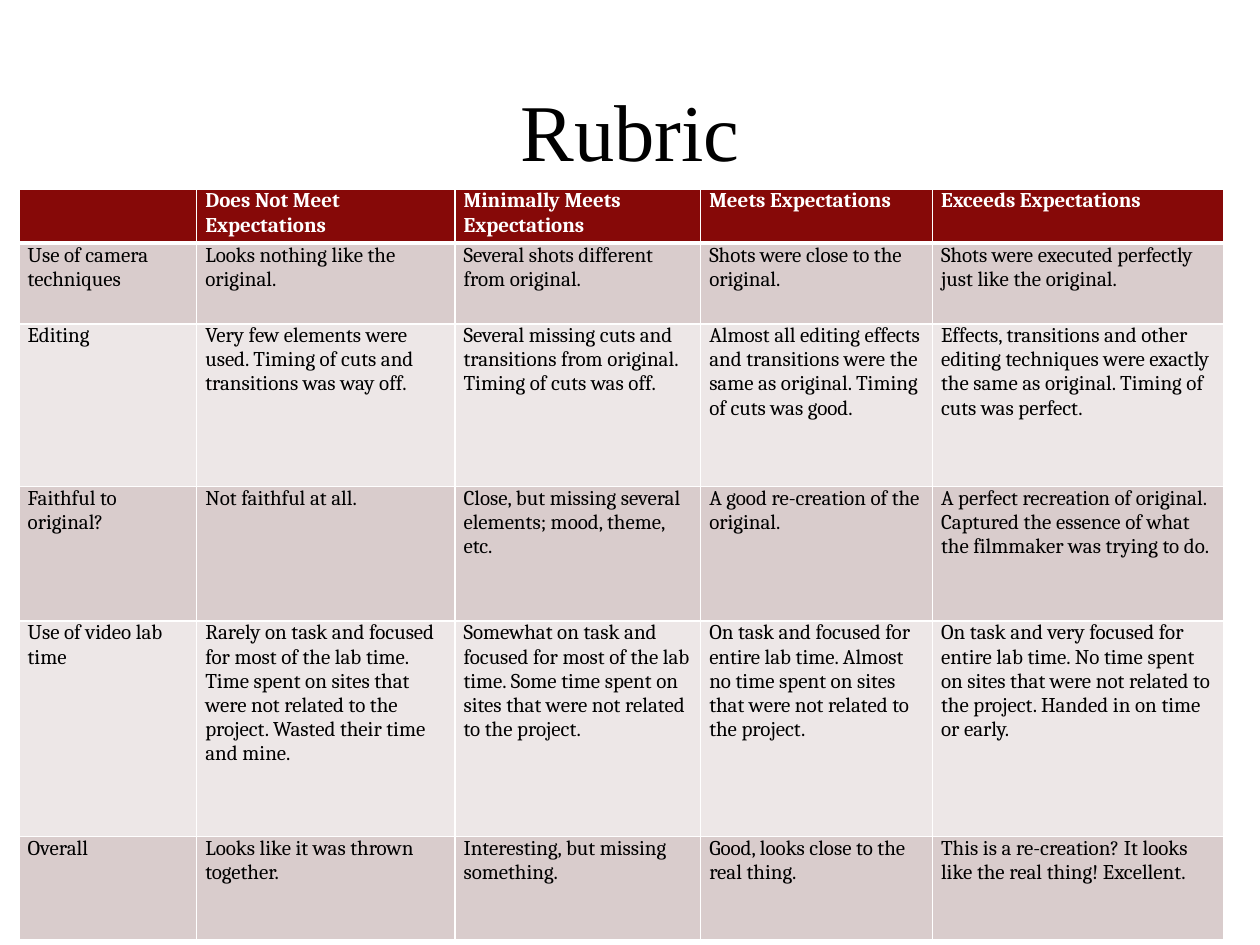
from lxml import etree
from pptx import Presentation
from pptx.dml.color import RGBColor
from pptx.enum.text import MSO_ANCHOR, PP_ALIGN
from pptx.oxml.ns import qn
from pptx.util import Inches, Pt

CENTER, LEFT = PP_ALIGN.CENTER, PP_ALIGN.LEFT
MIDDLE, TOP = MSO_ANCHOR.MIDDLE, MSO_ANCHOR.TOP
TITLE_ONLY = 5

WHITE, BLACK = "FFFFFF", "000000"
HEADER_FILL = "860908"
BAND_FILLS = ("EDE7E7", "D9CCCC")

COLUMN_WIDTHS = (1.41, 2.05, 1.95, 1.84, 2.31)
ROW_HEIGHTS = (0.43, 0.64, 1.29, 1.07, 1.71, 0.82)

RUBRIC = (
    ("", "Does Not Meet Expectations", "Minimally Meets Expectations",
     "Meets Expectations", "Exceeds Expectations"),
    ("Use of camera techniques",
     "Looks nothing like the original.",
     "Several shots different from original.",
     "Shots were close to the original.",
     "Shots were executed perfectly just like the original."),
    ("Editing",
     "Very few elements were used. Timing of cuts and transitions was way off.",
     "Several missing cuts and transitions from original. Timing of cuts was off.",
     "Almost all editing effects and transitions were the same as original. "
     "Timing of cuts was good.",
     "Effects, transitions and other editing techniques were exactly the same "
     "as original. Timing of cuts was perfect."),
    ("Faithful to original?",
     "Not faithful at all.",
     "Close, but missing several elements; mood, theme, etc.",
     "A good re-creation of the original.",
     "A perfect recreation of original. Captured the essence of what the "
     "filmmaker was trying to do."),
    ("Use of video lab time",
     "Rarely on task and focused for most of the lab time. Time spent on sites "
     "that were not related to the project. Wasted their time and mine.",
     "Somewhat on task and focused for most of the lab time. Some time spent on "
     "sites that were not related to the project.",
     "On task and focused for entire lab time. Almost no time spent on sites "
     "that were not related to the project.",
     "On task and very focused for entire lab time. No time spent on sites that "
     "were not related to the project. Handed in on time or early."),
    ("Overall",
     "Looks like it was thrown together.",
     "Interesting, but missing something.",
     "Good, looks close to the real thing.",
     "This is a re-creation? It looks like the real thing! Excellent."),
)


def rgb(value):
    return RGBColor.from_string(value)


def write_text(frame, text, *, size, font, color=BLACK, bold=False, align=LEFT):
    frame.word_wrap = True
    paragraph = frame.paragraphs[0]
    paragraph.text = text
    paragraph.alignment = align
    for target in (paragraph.font, *(run.font for run in paragraph.runs)):
        target.size = Pt(size)
        target.name = font
        target.bold = bold
        target.color.rgb = rgb(color)


def set_borders(cell, color, bottom_width):
    """Border lines come before the fill in the cell properties."""
    properties = cell._tc.get_or_add_tcPr()
    widths = {"a:lnL": 1, "a:lnR": 1, "a:lnT": 1, "a:lnB": bottom_width}
    for position, (tag, width) in enumerate(widths.items()):
        line = etree.Element(qn(tag), w=str(Pt(width)))
        fill = etree.SubElement(line, qn("a:solidFill"))
        etree.SubElement(fill, qn("a:srgbClr"), val=color)
        properties.insert(position, line)


def format_cell(cell, text, row):
    header = row == 0
    cell.margin_left = cell.margin_right = Inches(0.07)
    cell.margin_top = cell.margin_bottom = 0
    cell.vertical_anchor = TOP
    cell.fill.solid()
    cell.fill.fore_color.rgb = rgb(HEADER_FILL if header else BAND_FILLS[row % 2])
    set_borders(cell, WHITE, bottom_width=3 if header else 1)
    write_text(cell.text_frame, text, size=12, font="Cambria",
               color=WHITE if header else BLACK, bold=header)


def add_title(slide, text):
    title = slide.shapes.title
    title.left, title.top = Inches(1), Inches(0.55)
    title.width, title.height = Inches(8), Inches(0.95)
    title.text_frame.vertical_anchor = MIDDLE
    write_text(title.text_frame, text, size=46, font="Times New Roman", align=CENTER)


def add_rubric(slide):
    rubric = slide.shapes.add_table(
        len(RUBRIC), len(COLUMN_WIDTHS), Inches(0.15), Inches(1.5),
        Inches(sum(COLUMN_WIDTHS)), Inches(sum(ROW_HEIGHTS))).table
    for column, width in zip(rubric.columns, COLUMN_WIDTHS):
        column.width = Inches(width)
    for row, height in zip(rubric.rows, ROW_HEIGHTS):
        row.height = Inches(height)
    for row, entries in enumerate(RUBRIC):
        for column, text in enumerate(entries):
            format_cell(rubric.cell(row, column), text, row)


def main():
    deck = Presentation()
    deck.slide_width, deck.slide_height = Inches(10), Inches(7.5)
    slide = deck.slides.add_slide(deck.slide_layouts[TITLE_ONLY])
    add_title(slide, "Rubric")
    add_rubric(slide)
    deck.save("out.pptx")


if __name__ == "__main__":
    main()
